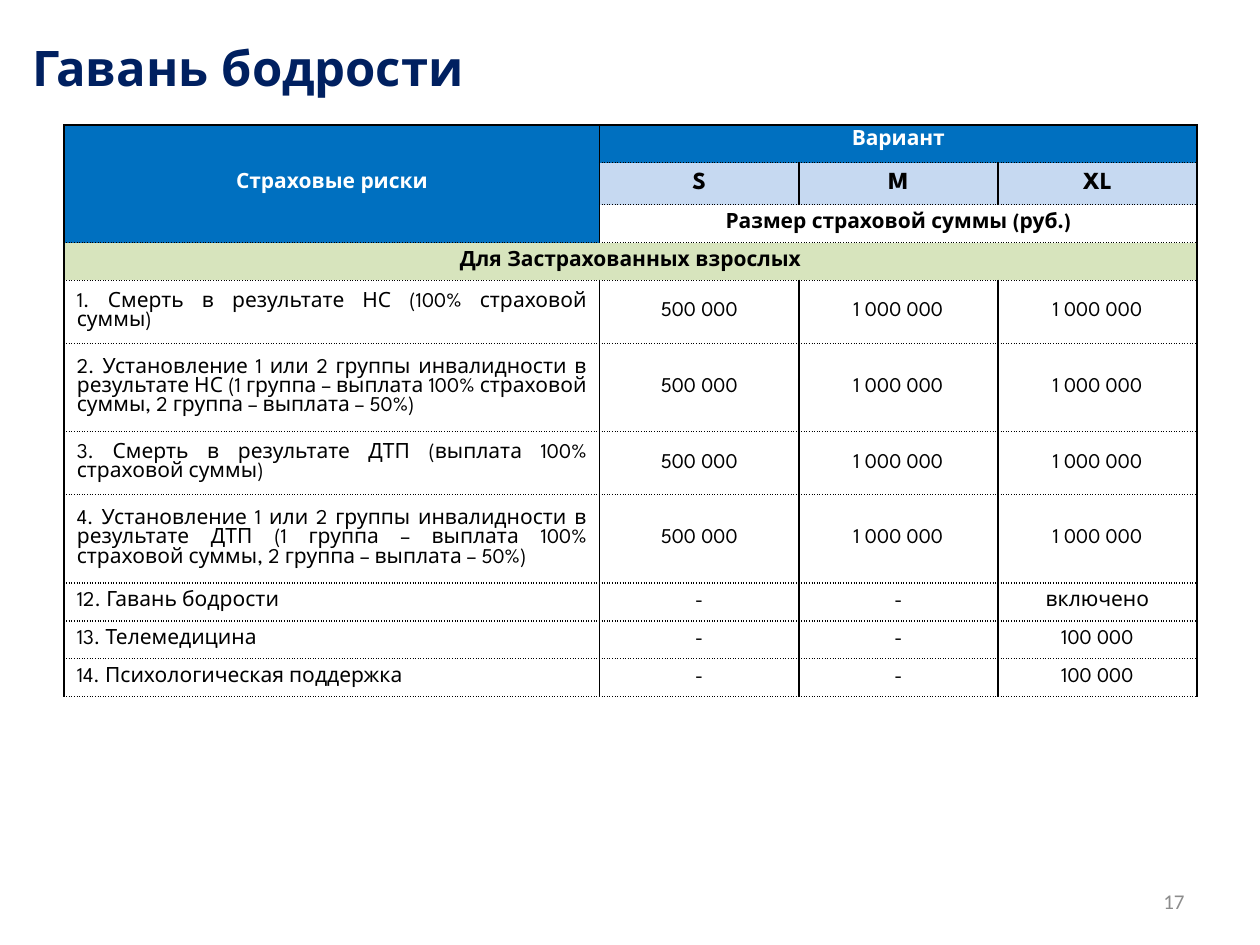
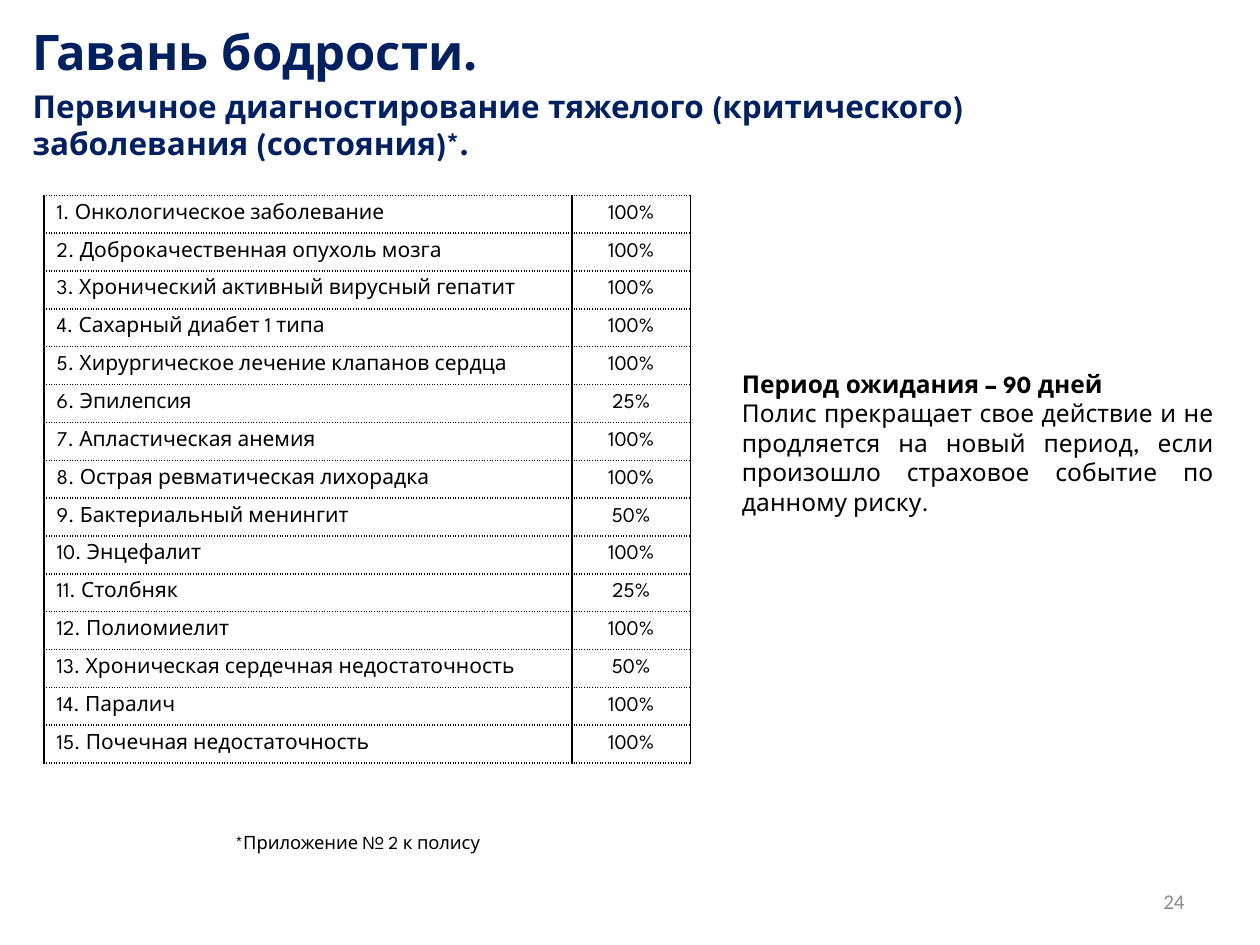
from lxml import etree
from pptx import Presentation
from pptx.dml.color import RGBColor
from pptx.enum.text import MSO_ANCHOR as Anchor, PP_ALIGN as Align
from pptx.oxml.ns import qn
from pptx.util import Inches, Pt

# Content
PROGRAM = "Гавань бодрости"
RISKS_TITLE = [PROGRAM]
RISKS_HEADER = [
    ["Страховые риски", "Вариант", "", ""],
    ["", "S", "M", "XL"],
    ["", "Размер страховой суммы (руб.)", "", ""],
    ["Для Застрахованных взрослых", "", "", ""],
]
SUMS = ["500 000", "1 000 000", "1 000 000"]
RISKS = [
    ["1. Смерть в результате НС (100% страховой суммы)", *SUMS],
    ["2. Установление 1 или 2 группы инвалидности в результате НС "
     "(1 группа – выплата 100% страховой суммы, 2 группа – выплата – 50%)", *SUMS],
    ["3. Смерть в результате ДТП (выплата 100% страховой суммы)", *SUMS],
    ["4. Установление 1 или 2 группы инвалидности в результате ДТП "
     "(1 группа – выплата 100% страховой суммы, 2 группа – выплата – 50%)", *SUMS],
    [f"12. {PROGRAM}", "-", "-", "включено"],
    ["13. Телемедицина", "-", "-", "100 000"],
    ["14. Психологическая поддержка", "-", "-", "100 000"],
]
RISK_ROW_HEIGHTS = [0.3, 0.33, 0.3, 0.3, 0.5, 0.7, 0.5, 0.7, 0.3, 0.3, 0.3]

DISEASES_TITLE = [
    f"{PROGRAM}.",
    "Первичное диагностирование тяжелого (критического) заболевания (состояния)*.",
]
DISEASES = [
    ("Онкологическое заболевание", 100),
    ("Доброкачественная опухоль мозга", 100),
    ("Хронический активный вирусный гепатит", 100),
    ("Сахарный диабет 1 типа", 100),
    ("Хирургическое лечение клапанов сердца", 100),
    ("Эпилепсия", 25),
    ("Апластическая анемия", 100),
    ("Острая ревматическая лихорадка", 100),
    ("Бактериальный менингит", 50),
    ("Энцефалит", 100),
    ("Столбняк", 25),
    ("Полиомиелит", 100),
    ("Хроническая сердечная недостаточность", 50),
    ("Паралич", 100),
    ("Почечная недостаточность", 100),
]
WAITING_PERIOD = [
    "Период ожидания – 90 дней",
    "Полис прекращает свое действие и не продляется на новый период, "
    "если произошло страховое событие по данному риску.",
]
FOOTNOTE = "*Приложение № 2 к полису"

# Shared look
FONT, NUMBER_FONT = "League Spartan", "Calibri"
NAVY = RGBColor(0x00, 0x20, 0x60)
BLUE = RGBColor(0x00, 0x70, 0xC0)
PALE_BLUE = RGBColor(0xC6, 0xD9, 0xF1)
PALE_GREEN = RGBColor(0xD7, 0xE4, 0xBD)
WHITE = RGBColor(0xFF, 0xFF, 0xFF)
BLACK = RGBColor(0, 0, 0)
GRAY = RGBColor(0x8C, 0x8C, 0x8C)


def style(paragraph, size, color=BLACK, bold=False, align=Align.LEFT, font=FONT):
    paragraph.alignment = align
    for run in paragraph.runs:
        run.font.name = font
        run.font.size = Pt(size)
        run.font.bold = bold
        run.font.color.rgb = color


def add_text(slide, box, lines, anchor=Anchor.TOP):
    frame = slide.shapes.add_textbox(*map(Inches, box)).text_frame
    frame.word_wrap = True
    frame.vertical_anchor = anchor
    frame.text = "\n".join(lines)
    return frame


def add_title(slide, top, width, height, lines):
    frame = add_text(slide, (0.26, top, width, height), lines)
    frame.margin_left = frame.margin_right = frame.margin_bottom = 0
    frame.margin_top = Inches(0.03)
    for paragraph, size in zip(frame.paragraphs, (28, 18)):
        style(paragraph, size, NAVY, True)
    for subtitle in frame.paragraphs[1:]:
        subtitle.space_before = Pt(3.6)


def add_page_number(slide, number):
    frame = add_text(slide, (7.17, 6.95, 2.33, 0.4), [str(number)], Anchor.MIDDLE)
    style(frame.paragraphs[0], 12, GRAY, align=Align.RIGHT, font=NUMBER_FONT)


def set_borders(cell, solid_top):
    """Solid sides, dotted rules between rows."""
    props = cell._tc.get_or_add_tcPr()
    dashes = {"lnL": "solid", "lnR": "solid",
              "lnT": "solid" if solid_top else "sysDot", "lnB": "sysDot"}
    for position, (side, dash) in enumerate(dashes.items()):
        line = etree.Element(qn(f"a:{side}"), w=str(Pt(1)))
        fill = etree.SubElement(line, qn("a:solidFill"))
        etree.SubElement(fill, qn("a:srgbClr"), val=str(BLACK))
        etree.SubElement(line, qn("a:prstDash"), val=dash)
        props.insert(position, line)


def add_grid(slide, left, top, widths, heights, rows, solid_top=False):
    """Table with justified first column and centred values."""
    box = map(Inches, (left, top, sum(widths), sum(heights)))
    table = slide.shapes.add_table(len(rows), len(widths), *box).table
    table.first_row = table.horz_banding = False
    for column, width in zip(table.columns, widths):
        column.width = Inches(width)
    for r, values in enumerate(rows):
        table.rows[r].height = Inches(heights[r])
        for c, value in enumerate(values):
            cell = table.cell(r, c)
            cell.text = value
            cell.vertical_anchor = Anchor.MIDDLE
            cell.fill.background()
            set_borders(cell, solid_top and r == 0)
            style(cell.text_frame.paragraphs[0], 12,
                  align=Align.CENTER if c else Align.JUSTIFY)
    return table


def style_risks_header(table):
    # Spans: first and last cell
    for first, last in [((0, 0), (2, 0)), ((0, 1), (0, 3)),
                        ((2, 1), (2, 3)), ((3, 0), (3, 3))]:
        table.cell(*first).merge(table.cell(*last))
    fills = [[BLUE] * 4, [BLUE] + [PALE_BLUE] * 3,
             [BLUE] + [None] * 3, [PALE_GREEN] * 4]
    for r, row_fills in enumerate(fills):
        for c, fill in enumerate(row_fills):
            cell = table.cell(r, c)
            if fill is not None:
                cell.fill.solid()
                cell.fill.fore_color.rgb = fill
            style(cell.text_frame.paragraphs[0], 14 if r == 1 else 12,
                  WHITE if fill == BLUE else BLACK, True, Align.CENTER)
    table.cell(0, 1).vertical_anchor = Anchor.TOP


def build_risks(slide):
    add_title(slide, 0.27, 6.78, 1.04, RISKS_TITLE)
    table = add_grid(slide, 0.51, 0.99, [4.25] + [1.58] * 3, RISK_ROW_HEIGHTS,
                     RISKS_HEADER + RISKS, solid_top=True)
    style_risks_header(table)
    add_page_number(slide, 17)


def build_diseases(slide):
    add_title(slide, 0.14, 7.41, 2.27, DISEASES_TITLE)
    rows = [(f"{number}. {disease}", f"{share}%")
            for number, (disease, share) in enumerate(DISEASES, 1)]
    add_grid(slide, 0.35, 1.55, [4.19, 0.94], [0.3] * len(rows), rows)

    # Waiting period and footnote
    waiting = add_text(slide, (5.79, 2.88, 3.94, 1.28), WAITING_PERIOD)
    for paragraph, bold in zip(waiting.paragraphs, (True, False)):
        style(paragraph, 14, bold=bold, align=Align.JUSTIFY)
    footnote = add_text(slide, (1.77, 6.55, 8.11, 0.28), [FOOTNOTE])
    style(footnote.paragraphs[0], 10.5, align=Align.JUSTIFY)
    add_page_number(slide, 24)


def main():
    deck = Presentation()
    deck.slide_width, deck.slide_height = Inches(10), Inches(7.5)
    blank = deck.slide_layouts[6]
    for build in (build_risks, build_diseases):
        build(deck.slides.add_slide(blank))
    deck.save("out.pptx")


if __name__ == "__main__":
    main()
